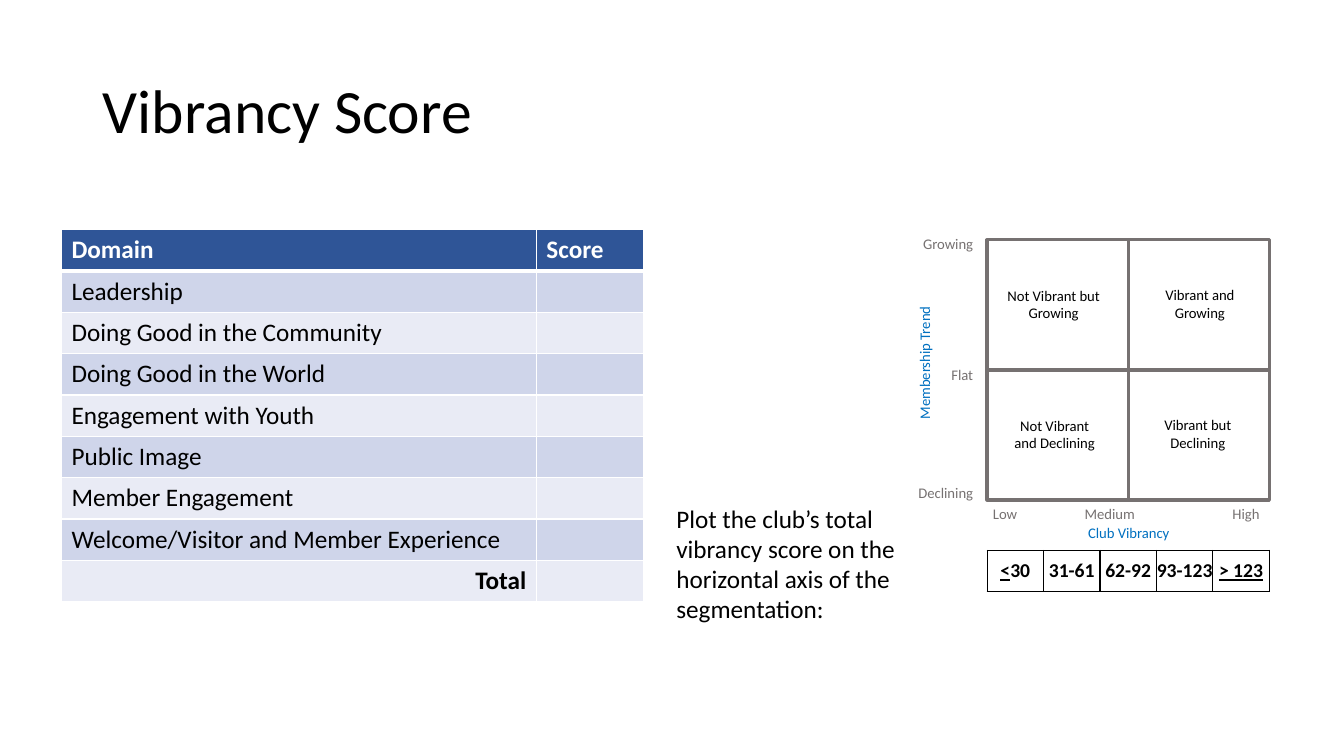
from lxml import etree
from pptx import Presentation
from pptx import util as u
from pptx.dml.color import RGBColor
from pptx.enum import shapes, text
from pptx.oxml.ns import qn

PX = 9144  # 100 px to the inch
HUES = {"ink": "000000", "white": "FFFFFF", "head": "2F5597", "dark": "CFD5EA",
        "light": "E9EBF5", "gray": "767171", "blue": "0070C0"}
LEFT, MID, RIGHT = text.PP_ALIGN.LEFT, text.PP_ALIGN.CENTER, text.PP_ALIGN.RIGHT

TITLE = "Vibrancy Score"
ROWS = ["Domain", "Leadership", "Doing Good in the Community", "Doing Good in the World",
        "Engagement with Youth", "Public Image", "Member Engagement",
        "Welcome/Visitor and Member Experience", "Total"]
# each band is a list of (words, underlined)
BANDS = [[("<", True), ("30", False)], [("31-61", False)], [("62-92", False)],
         [("93-123", False)], [("> 123", True)]]
# words, left, top, width, height
QUADS = [("Vibrant and Growing", 1134, 260, 112, 82),
         ("Vibrant but Declining", 1132, 389, 112, 82),
         ("Not Vibrant and Declining", 990, 378, 112, 105),
         ("Not Vibrant but Growing", 989, 249, 112, 105)]
# words, left, top, width, height, alignment, colour, rotation
LABELS = [("Growing", 876, 228, 99, 36, RIGHT, "gray", 0),
          ("Flat", 904, 358, 71, 37, RIGHT, "gray", 0),
          ("Declining", 876, 475, 99, 36, RIGHT, "gray", 0),
          ("Low", 975, 496, 71, 37, LEFT, "gray", 0),
          ("Medium", 1066, 496, 106, 36, LEFT, "gray", 0),
          ("High", 1188, 496, 71, 37, RIGHT, "gray", 0),
          ("Club Vibrancy", 1011, 515, 217, 37, MID, "blue", 0),
          ("Membership Trend", 823, 340, 200, 40, MID, "blue", 270)]
NOTE = "Plot the club’s total vibrancy score on the horizontal axis of the segmentation:"
GRID = (979, 238, 140, 129)  # left, top, box width, box height


def px(*sizes):
    return [u.Emu(size * PX) for size in sizes]


def rgb(hue):
    return RGBColor.from_string(HUES[hue])


def style(frame, size, hue="ink", align=LEFT, bold=False):
    for para in frame.paragraphs:
        para.alignment = align
        for run in para.runs:
            font = run.font
            font.name, font.size, font.bold = "Calibri", u.Pt(size), bold
            font.color.rgb = rgb(hue)


def label(words, box, size, hue="ink", align=LEFT, turn=0, anchor=text.MSO_ANCHOR.TOP):
    shape = slide.shapes.add_textbox(*px(*box))
    shape.rotation = turn
    frame = shape.text_frame
    frame.word_wrap = True
    frame.vertical_anchor = anchor
    frame.text = words
    style(frame, size, hue, align)


def edge(cell, hue, top=1, base=1):
    """Draw the four borders of a cell; top and base are widths in points."""
    props = cell._tc.get_or_add_tcPr()
    for spot, (side, width) in enumerate(zip("LRTB", (1, 1, top, base))):
        line = etree.Element(qn(f"a:ln{side}"), w=str(u.Pt(width)))
        fill = etree.SubElement(line, qn("a:solidFill"))
        etree.SubElement(fill, qn("a:srgbClr"), val=HUES[hue])
        props.insert(spot, line)


def grid(rows, widths, left, top, height):
    frame = slide.shapes.add_table(rows, len(widths), *px(left, top, sum(widths), rows * height))
    table = frame.table
    table.first_row = table.horz_banding = False
    for col, width in zip(table.columns, widths):
        col.width = px(width)[0]
    for row in table.rows:
        row.height = px(height)[0]
    return table


def domains():
    table = grid(len(ROWS), [471, 106], 61, 228, 41)
    for r, name in enumerate(ROWS):
        head, last = r == 0, r == len(ROWS) - 1
        for c, words in enumerate([name, "Score" if head else ""]):
            cell = table.cell(r, c)
            cell.text_frame.text = words
            style(cell.text_frame, 18, "white" if head else "ink",
                  RIGHT if last else LEFT, head or last)
            cell.fill.solid()
            cell.fill.fore_color.rgb = rgb("head" if head else "dark" if r % 2 else "light")
            edge(cell, "white", 3 if r == 1 else 1, 3 if head else 1)


def bands():
    table = grid(1, [56] * len(BANDS), 979, 546, 41)
    for c, parts in enumerate(BANDS):
        cell = table.cell(0, c)
        cell.margin_left = cell.margin_right = 0
        cell.vertical_anchor = text.MSO_ANCHOR.MIDDLE
        para = cell.text_frame.paragraphs[0]
        for words, under in parts:
            run = para.add_run()
            run.text = words
            run.font.underline = under
        style(cell.text_frame, 14, "ink", MID, True)
        cell.fill.background()
        edge(cell, "ink")


def boxes():
    left, top, wide, high = GRID
    for n in range(4):
        row, col = divmod(n, 2)
        box = slide.shapes.add_shape(shapes.MSO_SHAPE.RECTANGLE,
                                     *px(left + col * wide, top + row * high, wide, high))
        box.shadow.inherit = False
        box.fill.background()
        box.line.color.rgb = rgb("gray")
        box.line.width = u.Pt(2.25)


deck = Presentation()
deck.slide_width, deck.slide_height = px(1333, 750)
slide = deck.slides.add_slide(deck.slide_layouts[5])

title = slide.shapes.title
title.left, title.top, title.width, title.height = px(92, 40, 1150, 145)
title.text_frame.text = TITLE
title.text_frame.auto_size = text.MSO_AUTO_SIZE.NONE
title.text_frame.vertical_anchor = text.MSO_ANCHOR.MIDDLE
title.text_frame.paragraphs[0].line_spacing = 0.9
style(title.text_frame, 44)

domains()
bands()
boxes()
for words, *box, align, hue, turn in LABELS:
    label(words, box, 10.5, hue, align, turn)
for words, *box in QUADS:
    label(words, box, 10.5, align=MID, anchor=text.MSO_ANCHOR.MIDDLE)
label(NOTE, (661, 494, 239, 131), 18)

deck.save("out.pptx")
